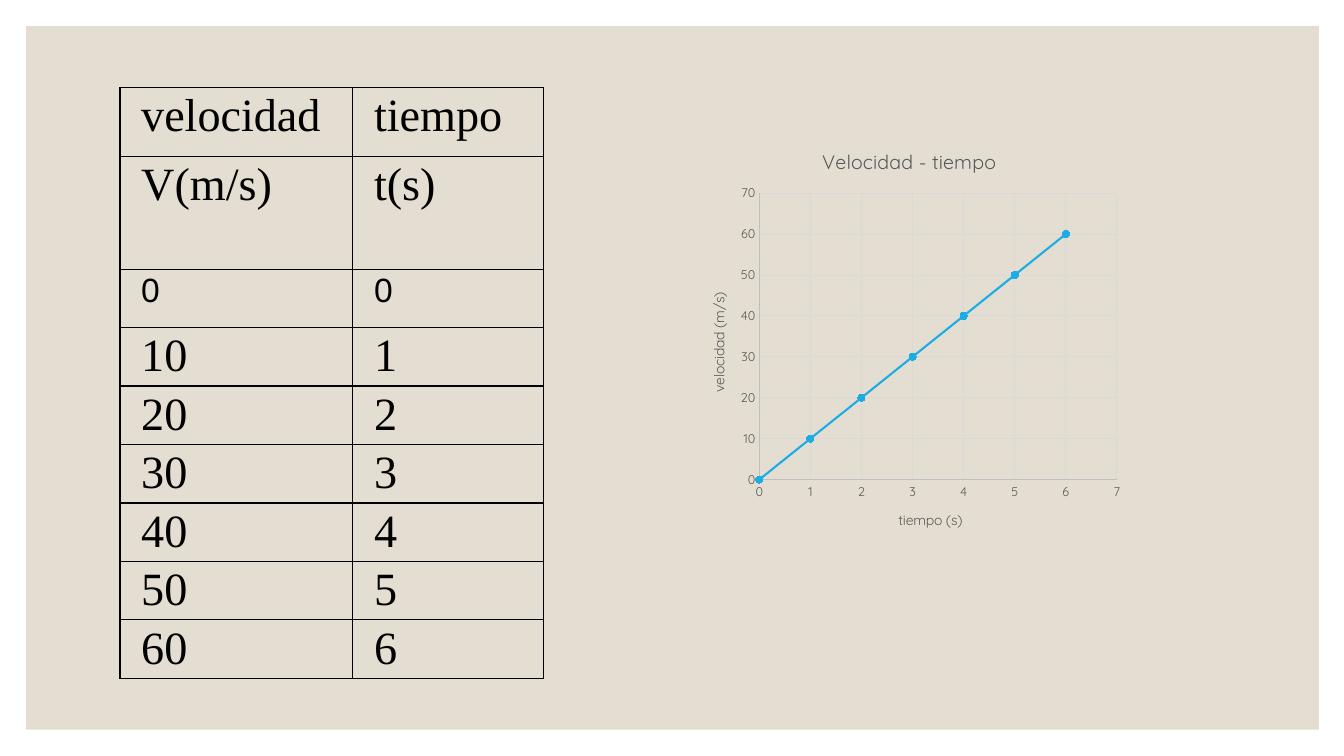
from lxml import etree
from pptx import Presentation
from pptx.chart.data import XyChartData
from pptx.dml.color import RGBColor
from pptx.enum.chart import XL_CHART_TYPE, XL_MARKER_STYLE, XL_TICK_MARK
from pptx.enum.shapes import MSO_SHAPE
from pptx.oxml import parse_xml
from pptx.oxml.ns import nsdecls, qn
from pptx.util import Inches, Pt

SCATTER = XL_CHART_TYPE.XY_SCATTER_SMOOTH
CIRCLE = XL_MARKER_STYLE.CIRCLE
NO_TICK = XL_TICK_MARK.NONE
RECTANGLE = MSO_SHAPE.RECTANGLE

TIMES = list(range(7))
SPEEDS = [10 * time for time in TIMES]


def color(hex_string):
    return RGBColor.from_string(hex_string)


class SlideBuilder:
    SAND, BLACK, BLUE = "E3DED1", "000000", "1CADE4"
    GRAY, AXIS, GRID = "595959", "BFBFBF", "D9D9D9"
    TABLE_FONT, ZERO_FONT, CHART_FONT = "Times New Roman", "Arial", "Quicksand"

    def __init__(self, page):
        self.page = page

    def panel(self, left, top, width, height):
        box = self.page.shapes.add_shape(
            RECTANGLE, Inches(left), Inches(top), Inches(width), Inches(height))
        box.shadow.inherit = False
        box.fill.solid()
        box.fill.fore_color.rgb = color(self.SAND)
        box.line.fill.background()

    def span(self, para, text, font, size, hex_string):
        run = para.add_run()
        run.text = text
        run.font.name = font
        run.font.size = Pt(size)
        run.font.bold = False
        run.font.color.rgb = color(hex_string)

    def borders(self, cell):
        properties = cell._tc.get_or_add_tcPr()
        for index, side in enumerate(("lnL", "lnR", "lnT", "lnB")):
            properties.insert(index, parse_xml(
                f'<a:{side} {nsdecls("a")} w="{Pt(1)}"><a:solidFill>'
                f'<a:srgbClr val="{self.BLACK}"/></a:solidFill></a:{side}>'))

    def table(self, left, top, widths, heights, rows):
        frame = self.page.shapes.add_table(
            len(rows), len(widths), Inches(left), Inches(top),
            Inches(sum(widths)), Inches(sum(heights)))
        table = frame.table
        table.first_row = table.horz_banding = False
        for column, width in zip(table.columns, widths):
            column.width = Inches(width)
        for row, height, texts in zip(table.rows, heights, rows):
            row.height = Inches(height)
            for cell, text in zip(row.cells, texts):
                cell.margin_left = cell.margin_right = Inches(0.21)
                cell.margin_top, cell.margin_bottom = Inches(0.03), 0
                cell.fill.background()
                self.borders(cell)
                font, size = (self.ZERO_FONT, 24) if text == "0" else (self.TABLE_FONT, 33)
                self.span(cell.text_frame.paragraphs[0], text, font, size, self.BLACK)

    def line(self, line, hex_string, width):
        line.color.rgb = color(hex_string)
        line.width = Pt(width)

    def chart_title(self, owner, text, size):
        """Give a title to a chart or to an axis."""
        owner.has_title = True
        title = owner.chart_title if hasattr(owner, "chart_title") else owner.axis_title
        self.span(title.text_frame.paragraphs[0], text, self.CHART_FONT, size, self.GRAY)

    def axis(self, axis, title, top_value, step):
        axis.minimum_scale, axis.maximum_scale = 0, top_value
        axis.major_unit = step
        axis.major_tick_mark = axis.minor_tick_mark = NO_TICK
        axis.has_major_gridlines = True
        self.line(axis.major_gridlines.format.line, self.GRID, 0.75)
        self.line(axis.format.line, self.AXIS, 0.75)
        font = axis.tick_labels.font
        font.name, font.size = self.CHART_FONT, Pt(9)
        font.color.rgb = color(self.GRAY)
        self.chart_title(axis, title, 10)

    def plot_layout(self, chart, **fractions):
        """Fix the inner plot area, in fractions of the chart."""
        area = chart._chartSpace.chart.plotArea
        for old in area.findall(qn("c:layout")):
            area.remove(old)
        layout = etree.Element(qn("c:layout"))
        manual = etree.SubElement(layout, qn("c:manualLayout"))
        settings = {"layoutTarget": "inner", "xMode": "edge", "yMode": "edge", **fractions}
        for name, value in settings.items():
            etree.SubElement(manual, qn(f"c:{name}")).set("val", str(value))
        area.insert(0, layout)

    def scatter(self, left, top, width, height, points):
        data = XyChartData()
        series_data = data.add_series("Series 1")
        for x, y in points:
            series_data.add_data_point(x, y)
        chart = self.page.shapes.add_chart(
            SCATTER, Inches(left), Inches(top), Inches(width), Inches(height), data).chart
        chart.has_legend = False
        chart.font.name, chart.font.size = self.CHART_FONT, Pt(10)
        chart.font.color.rgb = color(self.BLACK)
        self.chart_title(chart, "Velocidad - tiempo", 14)
        chart.chart_title.include_in_layout = False
        self.axis(chart.category_axis, "tiempo (s)", 7, 1)
        self.axis(chart.value_axis, "velocidad (m/s)", 70, 10)
        self.plot_layout(chart, x=0.16, y=0.15, w=0.81, h=0.68)
        plot = chart.plots[0]
        plot.vary_by_categories = False
        series = plot.series[0]
        series.smooth = True
        self.line(series.format.line, self.BLUE, 1.5)
        marker = series.marker
        marker.style, marker.size = CIRCLE, 5
        marker.format.fill.solid()
        marker.format.fill.fore_color.rgb = color(self.BLUE)
        self.line(marker.format.line, self.BLUE, 0.75)


def main():
    deck = Presentation()
    deck.slide_width, deck.slide_height = Inches(13.33), Inches(7.5)
    builder = SlideBuilder(deck.slides.add_slide(deck.slide_layouts[6]))
    builder.panel(0.26, 0.26, 12.82, 6.98)
    readings = [(str(speed), str(time)) for speed, time in zip(SPEEDS, TIMES)]
    rows = [("velocidad", "tiempo"), ("V(m/s)", "t(s)"), *readings]
    heights = [0.68, 1.12] + [0.58] * len(readings)
    builder.table(1.19, 0.87, [2.31, 1.89], heights, rows)
    builder.scatter(6.83, 1.29, 4.38, 4.18, zip(TIMES, SPEEDS))
    deck.save("out.pptx")


if __name__ == "__main__":
    main()
